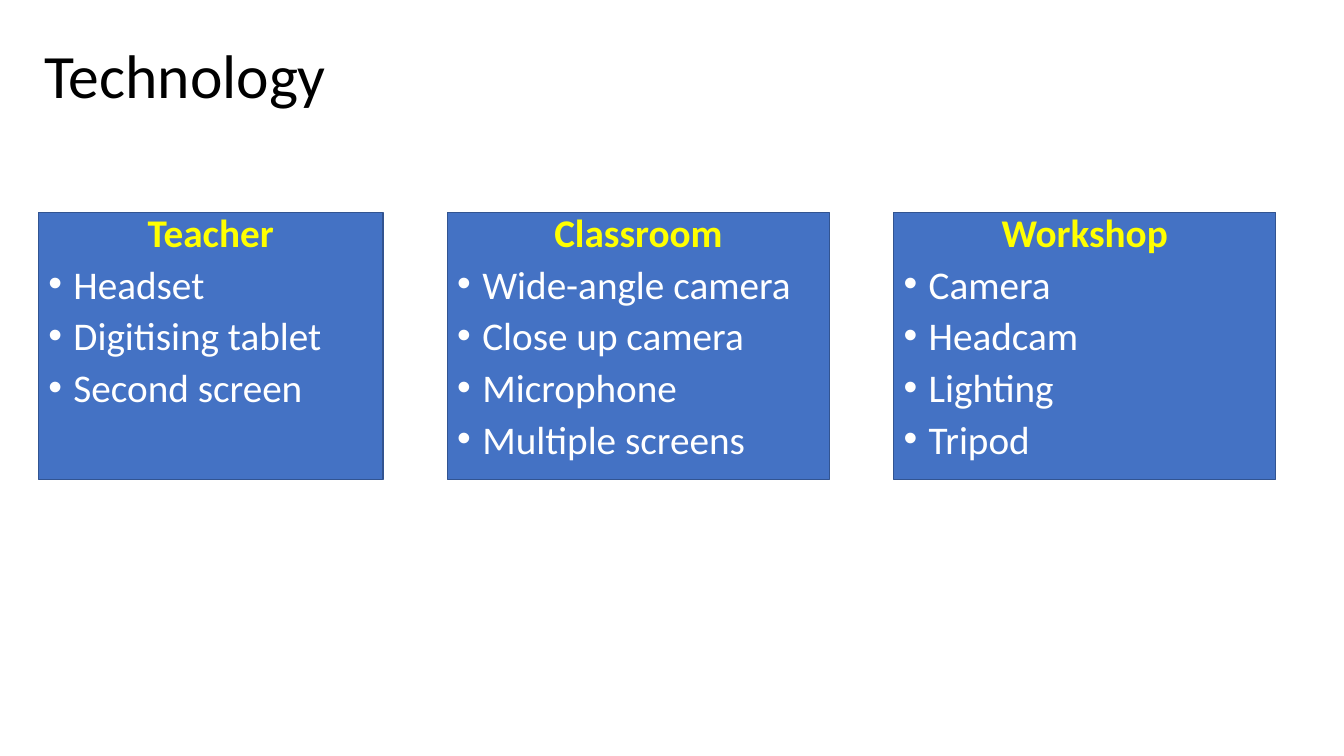
from lxml import etree
from pptx import Presentation
from pptx import util as u
from pptx.dml.color import RGBColor
from pptx.enum import shapes, text
from pptx.oxml import ns

BLACK = RGBColor(0x00, 0x00, 0x00)
WHITE = RGBColor(0xFF, 0xFF, 0xFF)
YELLOW = RGBColor(0xFF, 0xFF, 0x00)
BLUE = RGBColor(0x44, 0x72, 0xC4)
DARK_BLUE = RGBColor(0x32, 0x54, 0x91)


def write(para, content, size=28, color=WHITE, bold=False, align=text.PP_ALIGN.LEFT,
          spacing=0.8, before=0, bullet=False):
    para.alignment = align
    para.line_spacing = spacing
    para.space_before = u.Pt(before)
    if bullet:
        properties = para._p.get_or_add_pPr()
        properties.set("marL", str(u.Pt(18)))
        properties.set("indent", str(u.Pt(-18)))
        font = etree.SubElement(properties, ns.qn("a:buFont"))
        font.set("typeface", "Arial")
        etree.SubElement(properties, ns.qn("a:buChar")).set("char", "•")
    span = para.add_run()
    span.text = content
    span.font.name = "Calibri"
    span.font.size = u.Pt(size)
    span.font.bold = bold
    span.font.color.rgb = color


deck = Presentation()
deck.slide_width, deck.slide_height = u.Pt(960), u.Pt(540)
page = deck.slides.add_slide(deck.slide_layouts[6])

# Equipment panels: left, width, heading, items
panels = [
    (27.4, 246.2, "Teacher", ["Headset", "Digitising tablet", "Second screen"]),
    (319.5, 273, "Classroom",
     ["Wide-angle camera", "Close up camera", "Microphone", "Multiple screens"]),
    (638.3, 273, "Workshop", ["Camera", "Headcam", "Lighting", "Tripod"]),
]
for left, width, heading, items in panels:
    box = page.shapes.add_shape(shapes.MSO_SHAPE.RECTANGLE,
                                u.Pt(left), u.Pt(151.8), u.Pt(width), u.Pt(190.6))
    box.shadow.inherit = False
    box.fill.solid()
    box.fill.fore_color.rgb = BLUE
    box.line.color.rgb = DARK_BLUE
    box.line.width = u.Pt(1)
    frame = box.text_frame
    frame.word_wrap = True
    frame.vertical_anchor = text.MSO_ANCHOR.TOP
    write(frame.paragraphs[0], heading, color=YELLOW, bold=True,
          align=text.PP_ALIGN.CENTER)
    for item in items:
        write(frame.add_paragraph(), item, before=10, bullet=True)

# Title
title = page.shapes.add_textbox(u.Pt(24.5), u.Pt(28.8), u.Pt(221), u.Pt(123))
title.text_frame.word_wrap = True
write(title.text_frame.paragraphs[0], "Technology", size=44, color=BLACK, spacing=0.9)

deck.save("out.pptx")
